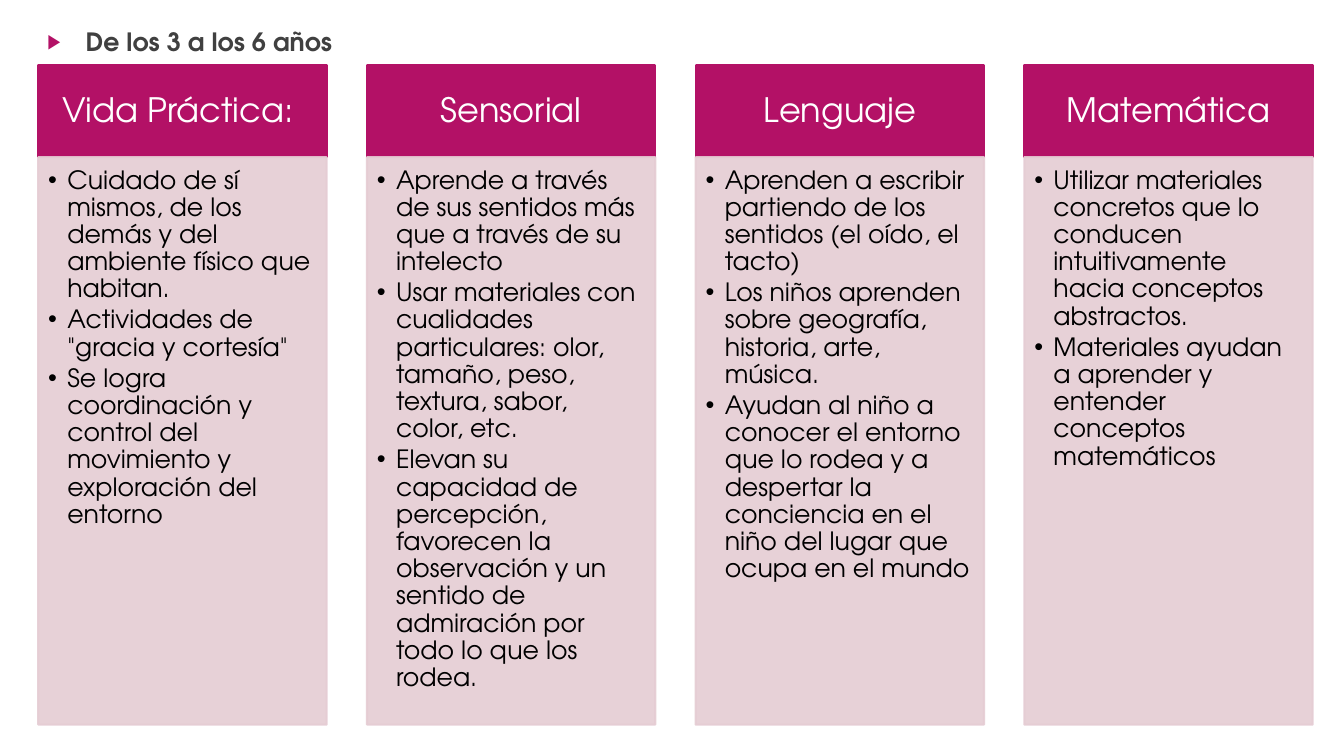
from lxml.etree import SubElement
from pptx import Presentation
from pptx.dml.color import RGBColor
from pptx.enum.shapes import MSO_SHAPE
from pptx.enum.text import MSO_ANCHOR, MSO_AUTO_SIZE, PP_ALIGN
from pptx.oxml.ns import qn
from pptx.util import Inches, Pt

HEADING = "De los 3 a los 6 años"
COLUMNS = [
    ("Vida Práctica: ", [
        "Cuidado de sí mismos, de los demás y del ambiente físico que habitan.",
        'Actividades de "gracia y cortesía"',
        "Se logra coordinación y control del movimiento y exploración del entorno",
    ]),
    ("Sensorial", [
        "Aprende a través de sus sentidos más que a través de su intelecto",
        "Usar materiales con cualidades particulares: olor, tamaño, peso, textura, sabor, color, etc.",
        "Elevan su capacidad de percepción, favorecen la observación y un sentido de "
        "admiración por todo lo que los rodea.",
    ]),
    ("Lenguaje", [
        "Aprenden a escribir partiendo de los sentidos (el oído, el tacto)",
        "Los niños aprenden sobre geografía, historia, arte, música.",
        "Ayudan al niño a conocer el entorno que lo rodea y a despertar la conciencia "
        "en el niño del lugar que ocupa en el mundo",
    ]),
    ("Matemática", [
        "Utilizar materiales concretos que lo conducen intuitivamente hacia conceptos abstractos.",
        "Materiales ayudan a aprender y entender conceptos matemáticos",
    ]),
]

MAGENTA = RGBColor(0xB3, 0x11, 0x66)
PINK = RGBColor(0xE5, 0xCC, 0xD3)
GRAY = RGBColor(0x40, 0x40, 0x40)
WHITE = RGBColor(0xFF, 0xFF, 0xFF)
BLACK = RGBColor(0, 0, 0)
FONT = "TeX Gyre Adventor"

LEFT, TOP, COL_W, GAP = 0.38, 0.65, 2.86, 0.4
HEAD_H, LIST_H = 0.91, 5.63

HEAD_FRAME = dict(vertical_anchor=MSO_ANCHOR.MIDDLE, margin_left=Inches(0.19),
                  margin_right=Inches(0.19), margin_top=Inches(0.11), margin_bottom=Inches(0.11))
LIST_FRAME = dict(vertical_anchor=MSO_ANCHOR.TOP, margin_left=Inches(0.1),
                  margin_right=Inches(0.14), margin_top=Inches(0.1), margin_bottom=Inches(0.16))
HEAD_PARA = dict(alignment=PP_ALIGN.CENTER, line_spacing=0.9)
LIST_PARA = dict(alignment=PP_ALIGN.LEFT, line_spacing=0.9, space_after=Pt(2.7), level=1)


def set_attrs(obj, values):
    for name, value in values.items():
        setattr(obj, name, value)


def add_bullet(p, char, indent, color, percent):
    pPr = p._p.get_or_add_pPr()
    pPr.set("marL", str(Inches(indent)))
    pPr.set("indent", str(-Inches(indent)))
    clr = SubElement(pPr, qn("a:buClr"))
    SubElement(clr, qn("a:srgbClr"), val=str(color))
    SubElement(pPr, qn("a:buSzPct"), val=str(percent * 1000))
    SubElement(pPr, qn("a:buFont"), typeface="Arial")
    SubElement(pPr, qn("a:buChar"), char=char)


def add_text(p, text, size, color, para, bold=False):
    set_attrs(p, para)
    r = p.add_run()
    r.text = text
    set_attrs(r.font, dict(name=FONT, size=Pt(size), bold=bold))
    r.font.color.rgb = color


def add_panel(shapes, left, top, height, color, frame, alpha=100):
    sp = shapes.add_shape(MSO_SHAPE.RECTANGLE, Inches(left), Inches(top),
                          Inches(COL_W), Inches(height))
    sp.shadow.inherit = False
    sp.fill.solid()
    sp.fill.fore_color.rgb = color
    sp.line.color.rgb = color
    sp.line.width = Pt(1.5)
    if alpha < 100:
        for clr in sp._element.spPr.iter(qn("a:srgbClr")):
            SubElement(clr, qn("a:alpha"), val=str(alpha * 1000))
    tf = sp.text_frame
    tf.word_wrap = True
    set_attrs(tf, frame)
    return tf


def main():
    prs = Presentation()
    prs.slide_width, prs.slide_height = Inches(13.33), Inches(7.5)
    slide = prs.slides.add_slide(prs.slide_layouts[1])
    title = slide.shapes.title._element
    title.getparent().remove(title)

    body = slide.placeholders[1]
    set_attrs(body, dict(left=Inches(0.37), top=Inches(0.21),
                         width=Inches(12.51), height=Inches(6.94)))
    tf = body.text_frame
    set_attrs(tf, dict(auto_size=MSO_AUTO_SIZE.NONE, vertical_anchor=MSO_ANCHOR.TOP))
    p = tf.paragraphs[0]
    add_text(p, HEADING, 18, GRAY, dict(space_before=Pt(0)), bold=True)
    add_bullet(p, "▶", 0.38, MAGENTA, 80)

    for i, (head, items) in enumerate(COLUMNS):
        left = LEFT + i * (COL_W + GAP)
        tf = add_panel(slide.shapes, left, TOP, HEAD_H, MAGENTA, HEAD_FRAME)
        add_text(tf.paragraphs[0], head, 24, WHITE, HEAD_PARA)
        tf = add_panel(slide.shapes, left, TOP + HEAD_H, LIST_H, PINK, LIST_FRAME, 90)
        for j, item in enumerate(items):
            p = tf.add_paragraph() if j else tf.paragraphs[0]
            add_text(p, item, 18, BLACK, LIST_PARA)
            add_bullet(p, "•", 0.19, BLACK, 100)

    prs.save("out.pptx")


if __name__ == "__main__":
    main()
